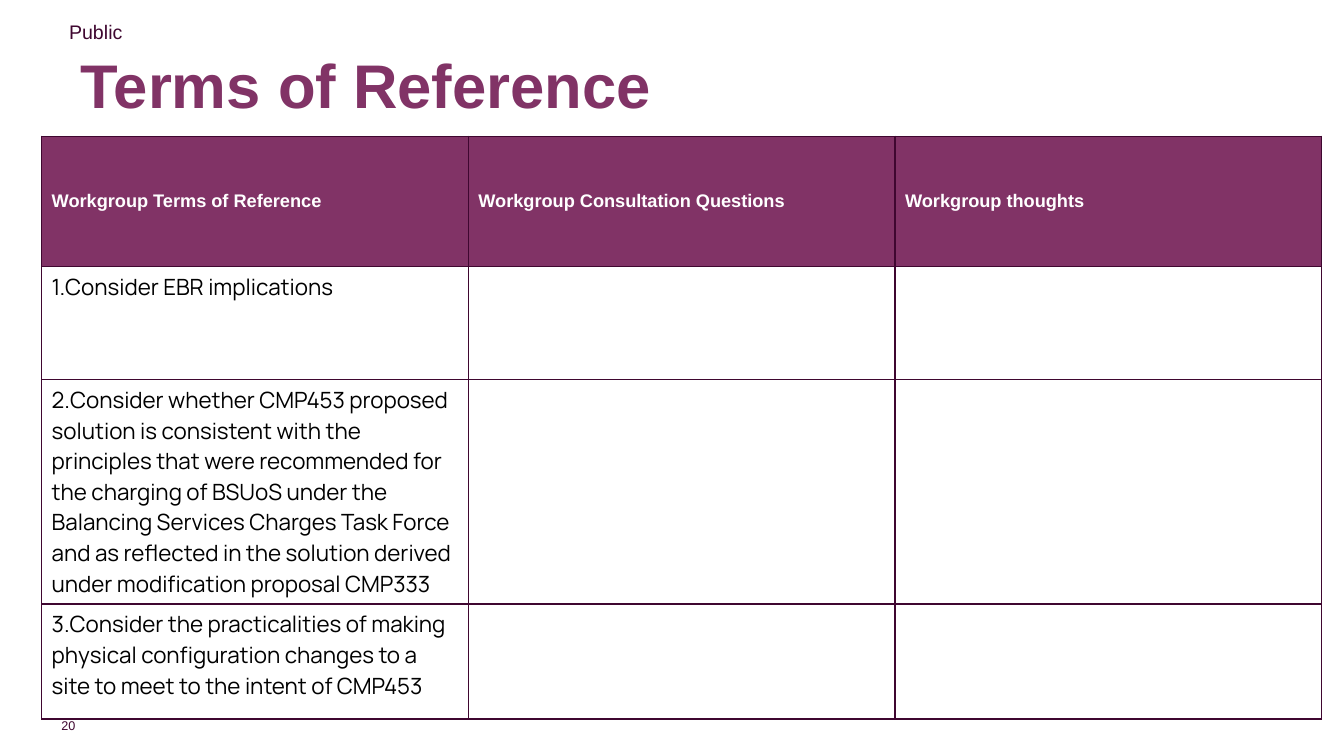
import dataclasses

import lxml.etree
import pptx
import pptx.dml.color
import pptx.enum.text
import pptx.oxml.ns
import pptx.util

Cm = pptx.util.Cm
Pt = pptx.util.Pt
ALIGN = pptx.enum.text.PP_ALIGN
ANCHOR = pptx.enum.text.MSO_ANCHOR
qn = pptx.oxml.ns.qn


@dataclasses.dataclass(frozen=True)
class Theme:
    plum: str = "813366"
    dark: str = "3F0730"
    white: str = "FFFFFF"
    black: str = "000000"
    heading_font: str = "Arial"
    body_font: str = "Manrope"
    title_size: int = 44
    body_size: int = 16
    label_size: int = 14
    header_size: int = 13
    number_size: int = 9
    border_width: float = 1


THEME = Theme()
HEADERS = [
    "Workgroup Terms of Reference",
    "Workgroup Consultation Questions",
    "Workgroup thoughts",
]
TERMS = [
    "Consider EBR implications",
    "Consider whether CMP453 proposed solution is consistent with the principles "
    "that were recommended for the charging of BSUoS under the Balancing Services "
    "Charges Task Force and as reflected in the solution derived under modification "
    "proposal CMP333",
    "Consider the practicalities of making physical configuration changes to a site "
    "to meet to the intent of CMP453",
]
ROW_HEIGHTS = [3.28, 2.86, 5.65, 2.9]


def set_all(target, values):
    for name, value in values.items():
        setattr(target, name, value)


def write(frame, text, size, color, font=THEME.heading_font, bold=False, align=ALIGN.LEFT):
    """Put one formatted line in the frame and return its paragraph."""
    para = frame.paragraphs[0]
    para.alignment = align
    span = para.add_run()
    span.text = text
    set_all(span.font, {"name": font, "size": Pt(size), "bold": bold})
    span.font.color.rgb = pptx.dml.color.RGBColor.from_string(color)
    return para


def number_paragraph(para, start):
    properties = para._p.get_or_add_pPr()
    for name in ("marL", "indent"):
        properties.set(name, "0")
    lxml.etree.SubElement(properties, qn("a:buFont"), typeface="+mj-lt")
    lxml.etree.SubElement(
        properties, qn("a:buAutoNum"), type="arabicPeriod", startAt=str(start)
    )


def add_borders(cell):
    properties = cell._tc.get_or_add_tcPr()
    for position, side in enumerate(("lnL", "lnR", "lnT", "lnB")):
        line = lxml.etree.Element(qn(f"a:{side}"), w=str(Pt(THEME.border_width)))
        fill = lxml.etree.SubElement(line, qn("a:solidFill"))
        lxml.etree.SubElement(fill, qn("a:srgbClr"), val=THEME.dark)
        properties.insert(position, line)


def place_title(page, left, top, width, height):
    title = page.shapes.title
    set_all(title, {"left": left, "top": top, "width": width, "height": height})
    set_all(title.text_frame, {"vertical_anchor": ANCHOR.MIDDLE, "word_wrap": True})
    para = write(
        title.text_frame, "Terms of Reference", THEME.title_size, THEME.plum, bold=True
    )
    para.line_spacing = 0.9


def place_label(page, left, top, width, height):
    frame = page.shapes.add_textbox(left, top, width, height).text_frame
    frame.word_wrap = True
    write(frame, "Public", THEME.label_size, THEME.dark)


def place_page_number(page, left, top, width, height):
    frame = page.shapes.add_textbox(left, top, width, height).text_frame
    margins = {f"margin_{side}": 0 for side in ("left", "top", "right", "bottom")}
    set_all(frame, {**margins, "vertical_anchor": ANCHOR.MIDDLE, "word_wrap": False})
    write(frame, "20", THEME.number_size, THEME.dark, align=ALIGN.RIGHT)


def place_terms_table(page, left, top, width, height):
    table = page.shapes.add_table(
        len(ROW_HEIGHTS), len(HEADERS), left, top, width, height
    ).table
    set_all(table, {"first_row": False, "horz_banding": False})
    for column in table.columns:
        column.width = width // len(HEADERS)
    for row, row_height in zip(table.rows, ROW_HEIGHTS):
        row.height = Cm(row_height)
    for cell in table.iter_cells():
        cell.fill.background()
        add_borders(cell)
    for cell, text in zip(table.rows[0].cells, HEADERS):
        cell.fill.solid()
        cell.fill.fore_color.rgb = pptx.dml.color.RGBColor.from_string(THEME.plum)
        cell.vertical_anchor = ANCHOR.MIDDLE
        write(cell.text_frame, text, THEME.header_size, THEME.white,
              bold=True, align=ALIGN.JUSTIFY)
    for number, text in enumerate(TERMS, start=1):
        frame = table.cell(number, 0).text_frame
        number_paragraph(frame.paragraphs[0], number)
        write(frame, text, THEME.body_size, THEME.black, font=THEME.body_font,
              align=ALIGN.JUSTIFY if number == 1 else ALIGN.LEFT)


def main():
    deck = pptx.Presentation()
    set_all(deck, {"slide_width": Cm(33.87), "slide_height": Cm(19.05)})
    page = deck.slides.add_slide(deck.slide_layouts.get_by_name("Title Only"))
    place_page_number(page, Cm(1.52), Cm(18.08), Cm(0.38), Cm(0.38))
    place_label(page, Cm(1.49), Cm(0.38), Cm(12.7), Cm(0.86))
    place_title(page, Cm(1.78), Cm(1.02), Cm(26.97), Cm(2.41))
    place_terms_table(page, Cm(1.05), Cm(3.43), Cm(32.26), Cm(sum(ROW_HEIGHTS)))
    deck.save("out.pptx")


if __name__ == "__main__":
    main()
